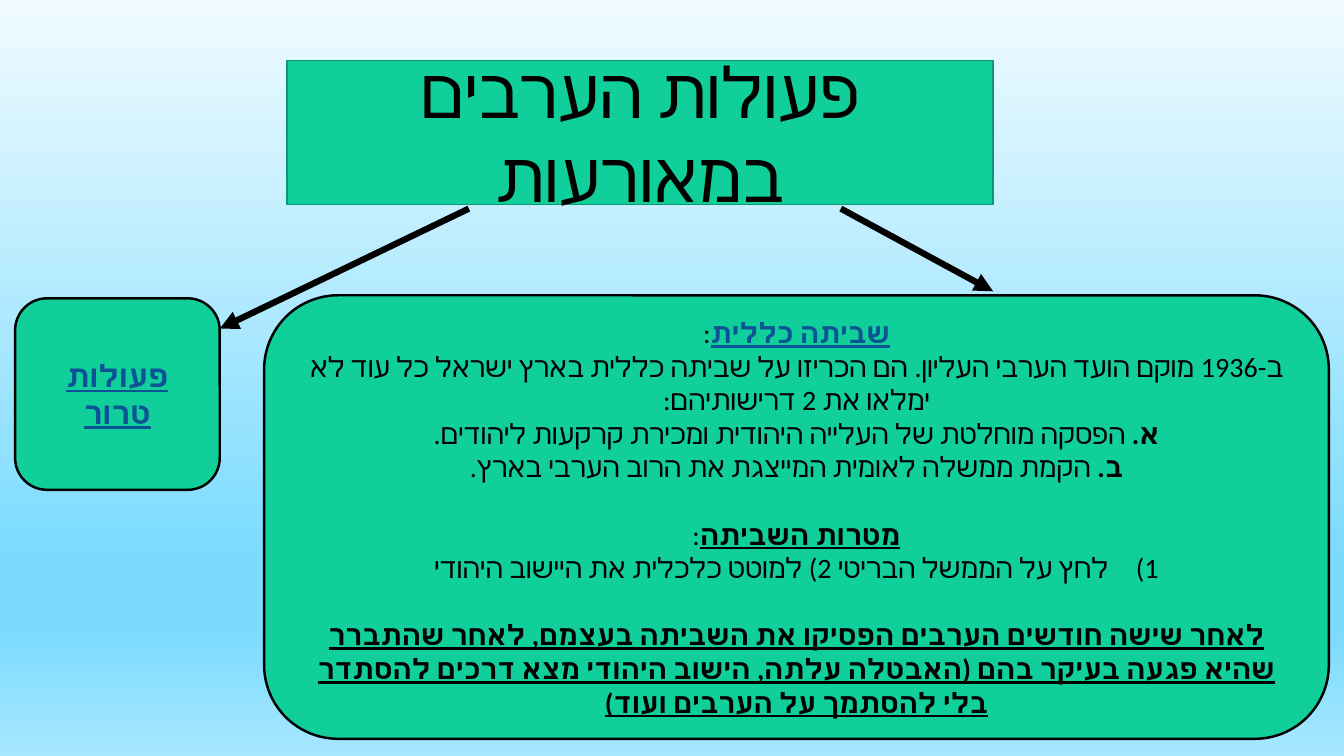
from dataclasses import dataclass

from lxml import etree
from pptx import Presentation
from pptx.dml.color import RGBColor
from pptx.enum.shapes import MSO_CONNECTOR, MSO_SHAPE
from pptx.enum.text import MSO_ANCHOR, MSO_AUTO_SIZE, PP_ALIGN
from pptx.oxml.ns import qn
from pptx.util import Inches, Pt

ROUNDED = MSO_SHAPE.ROUNDED_RECTANGLE
STRAIGHT = MSO_CONNECTOR.STRAIGHT
CENTER = PP_ALIGN.CENTER
MIDDLE = MSO_ANCHOR.MIDDLE
NO_AUTOFIT = MSO_AUTO_SIZE.NONE


@dataclass(frozen=True)
class Theme:
    font: str = "Calibri"
    box: str = "10CF9B"
    title_border: str = "0C9973"
    ink: str = "000000"
    heading: str = "0B5394"
    title_size: int = 50
    terror_size: int = 22
    body_size: int = 20
    gap: int = 24
    title_line: float = 1.25
    box_line: float = 1.75
    arrow_line: float = 4.5
    background: tuple = ((0, "F0FBFF"), (74, "7BDBFF"), (83, "7BDBFF"), (100, "A7E7FF"))


THEME = Theme()
SLIDE_SIZE = (13.33, 7.5)

PLAIN = (False, False, THEME.ink)
BOLD = (True, False, THEME.ink)
UNDERLINED = (True, True, THEME.ink)
HEADING = (True, True, THEME.heading)

TITLE = [{"runs": [("פעולות הערבים במאורעות", PLAIN)]}]
TERROR = [{"runs": [("פעולות טרור", HEADING)]}]
STRIKE = [
    {"runs": [("שביתה כללית", HEADING), (":", PLAIN)]},
    {"runs": [("ב-1936 מוקם הועד הערבי העליון. הם הכריזו על שביתה כללית בארץ ישראל "
               "כל עוד לא ימלאו את 2 דרישותיהם:", PLAIN)]},
    {"runs": [("א.", BOLD), (" הפסקה מוחלטת של העלייה היהודית ומכירת קרקעות ליהודים.", PLAIN)]},
    {"runs": [("ב.", BOLD), (" הקמת ממשלה לאומית המייצגת את הרוב הערבי בארץ.", PLAIN)]},
    {"runs": [("מטרות השביתה", UNDERLINED), (":", PLAIN)], "gap": True},
    {"runs": [("לחץ על הממשל הבריטי 2) למוטט כלכלית את היישוב היהודי", PLAIN)], "numbered": True},
    {"runs": [("לאחר שישה חודשים הערבים הפסיקו את השביתה בעצמם, לאחר שהתברר שהיא פגעה "
               "בעיקר בהם (האבטלה עלתה, הישוב היהודי מצא דרכים להסתדר בלי להסתמך על "
               "הערבים ועוד)", UNDERLINED)], "gap": True},
]

TITLE_BOX = (2.85, 0.6, 7, 1.43)
STRIKE_BOX = (2.62, 2.93, 10.56, 4.4)
TERROR_BOX = (0.15, 2.96, 2.03, 1.9)
ARROWS = [
    ((8.34, 2.07), (9.85, 2.89)),
    ((4.65, 2.07), (TERROR_BOX[0] + TERROR_BOX[2], 3.26)),
]


def color(value):
    return RGBColor.from_string(value)


def paint_background(slide):
    fill = slide.background.fill
    fill.gradient()
    fill.gradient_angle = 270
    stops = slide.element.find(".//" + qn("a:gsLst"))
    for stop in list(stops):
        stops.remove(stop)
    for position, value in THEME.background:
        stop = etree.SubElement(stops, qn("a:gs"), pos=str(position * 1000))
        etree.SubElement(stop, qn("a:srgbClr"), val=value)


def style_box(shape, border, width):
    shape.fill.solid()
    shape.fill.fore_color.rgb = color(THEME.box)
    shape.line.color.rgb = color(border)
    shape.line.width = Pt(width)


def write_text(shape, content, size, right_to_left=False):
    frame = shape.text_frame
    frame.word_wrap = True
    frame.auto_size = NO_AUTOFIT
    frame.vertical_anchor = MIDDLE
    for index, entry in enumerate(content):
        paragraph = frame.paragraphs[0] if index == 0 else frame.add_paragraph()
        paragraph.alignment = CENTER
        properties = paragraph._p.get_or_add_pPr()
        if right_to_left:
            properties.set("rtl", "1")
        if entry.get("gap"):
            paragraph.space_before = Pt(THEME.gap)
        if entry.get("numbered"):
            properties.set("marL", str(Inches(0.5)))
            properties.set("indent", str(-Inches(0.5)))
            etree.SubElement(properties, qn("a:buAutoNum"), type="arabicParenR")
        for text, (bold, underline, ink) in entry["runs"]:
            run = paragraph.add_run()
            run.text = text
            font = run.font
            font.name = THEME.font
            font.size = Pt(size)
            font.bold = bold
            font.underline = underline
            font.color.rgb = color(ink)
            etree.SubElement(run._r.get_or_add_rPr(), qn("a:cs"), typeface=THEME.font)


def add_title(slide):
    title = slide.shapes.title
    title.left, title.top, title.width, title.height = map(Inches, TITLE_BOX)
    geometry = etree.SubElement(title.element.spPr, qn("a:prstGeom"), prst="roundRect")
    etree.SubElement(geometry, qn("a:avLst"))
    style_box(title, THEME.title_border, THEME.title_line)
    write_text(title, TITLE, THEME.title_size)


def add_box(slide, place, content, size, right_to_left=False):
    box = slide.shapes.add_shape(ROUNDED, *map(Inches, place))
    box.shadow.inherit = False
    style_box(box, THEME.ink, THEME.box_line)
    write_text(box, content, size, right_to_left)


def add_arrow(slide, start, end):
    arrow = slide.shapes.add_connector(STRAIGHT, *map(Inches, start + end))
    arrow.line.color.rgb = color(THEME.ink)
    arrow.line.width = Pt(THEME.arrow_line)
    etree.SubElement(arrow.line._get_or_add_ln(), qn("a:tailEnd"), type="triangle")
    etree.SubElement(arrow.element.spPr, qn("a:effectLst"))


def main():
    presentation = Presentation()
    presentation.slide_width, presentation.slide_height = map(Inches, SLIDE_SIZE)
    slide = presentation.slides.add_slide(presentation.slide_layouts[5])
    paint_background(slide)
    add_title(slide)
    for start, end in ARROWS:
        add_arrow(slide, start, end)
    add_box(slide, STRIKE_BOX, STRIKE, THEME.body_size, right_to_left=True)
    add_box(slide, TERROR_BOX, TERROR, THEME.terror_size)
    presentation.save("out.pptx")


if __name__ == "__main__":
    main()
